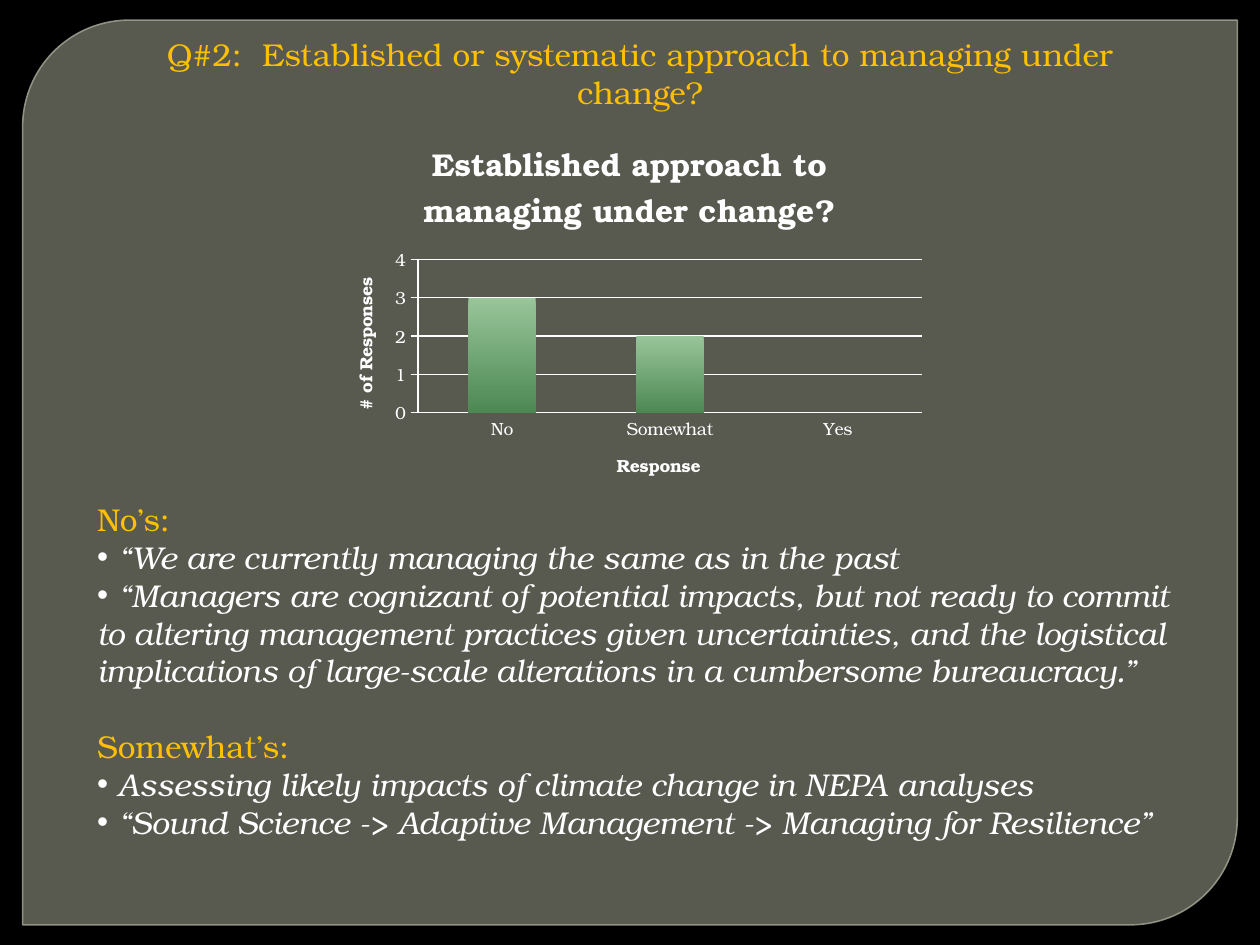
from lxml import etree
from pptx import Presentation
from pptx.chart.data import CategoryChartData
from pptx.dml.color import RGBColor
from pptx.enum.chart import XL_CHART_TYPE, XL_TICK_MARK
from pptx.enum.shapes import MSO_SHAPE
from pptx.enum.text import MSO_ANCHOR, MSO_AUTO_SIZE, PP_ALIGN
from pptx.oxml import parse_xml
from pptx.oxml.ns import nsdecls, qn
from pptx.util import Inches, Pt

COLUMN = XL_CHART_TYPE.COLUMN_CLUSTERED
TICK_NONE, TICK_OUT = XL_TICK_MARK.NONE, XL_TICK_MARK.OUTSIDE
PANEL = MSO_SHAPE.ROUND_2_DIAG_RECTANGLE
MIDDLE, TOP = MSO_ANCHOR.MIDDLE, MSO_ANCHOR.TOP
NO_FIT = MSO_AUTO_SIZE.NONE
CENTER, LEFT = PP_ALIGN.CENTER, PP_ALIGN.LEFT

BLACK = RGBColor(0x00, 0x00, 0x00)
WHITE = RGBColor(0xFF, 0xFF, 0xFF)
GOLD = RGBColor(0xFF, 0xC0, 0x00)
PANEL_FILL = RGBColor(0x88, 0x8B, 0x7B)
PANEL_LINE = RGBColor(0x9D, 0xA0, 0x90)
BAR_TOP = RGBColor(0x98, 0xC5, 0x9A)
BAR_BOTTOM = RGBColor(0x4D, 0x88, 0x53)
FONT = "TeX Gyre Bonum"


def set_font(font, size, color, bold=False, italic=False):
    font.name = FONT
    font.size = Pt(size)
    font.color.rgb = color
    font.bold = bold
    font.italic = italic


def place(shape, left, top, width, height):
    shape.left, shape.top = Inches(left), Inches(top)
    shape.width, shape.height = Inches(width), Inches(height)


prs = Presentation()
prs.slide_width, prs.slide_height = Inches(10), Inches(7.5)
s = prs.slides.add_slide(prs.slide_layouts[1])
s.background.fill.solid()
s.background.fill.fore_color.rgb = BLACK

panel = s.shapes.add_shape(PANEL, Inches(0.18), Inches(0.16), Inches(9.64), Inches(7.18))
panel.adjustments[0] = 0.118
panel.adjustments[1] = 0
panel.shadow.inherit = False
panel.fill.solid()
panel.fill.fore_color.rgb = PANEL_FILL
panel.line.color.rgb = PANEL_LINE
panel.line.width = Pt(0.87)
for color, alpha in zip(panel._element.spPr.iter(qn("a:srgbClr")), (65000, 88000)):
    etree.SubElement(color, qn("a:alpha")).set("val", str(alpha))
s.shapes._spTree.insert(2, panel._element)

title = s.shapes.title
place(title, 0.83, 0.38, 8.5, 0.4)
tf = title.text_frame
tf.text = "Q#2:  Established or systematic approach to managing under change?"
tf.auto_size = NO_FIT
tf.vertical_anchor = MIDDLE
p = tf.paragraphs[0]
p.alignment = CENTER
set_font(p.font, 18, GOLD)

data = CategoryChartData(number_format="0")
data.categories = ["No", "Somewhat", "Yes"]
data.add_series("Series 1", (3, 2, 0))
chart = s.shapes.add_chart(
    COLUMN, Inches(2.58), Inches(0.92), Inches(4.83), Inches(3.08), data
).chart
set_font(chart.font, 10, WHITE)
chart.has_legend = False
cat, val = chart.category_axis, chart.value_axis
for owner, text, size in (
    (chart, "Established approach to managing under change?", 18),
    (cat, "Response", 10),
    (val, "# of Responses", 10),
):
    heading = owner.chart_title if owner is chart else owner.axis_title
    heading.text_frame.text = text
    set_font(heading.text_frame.paragraphs[0].font, size, WHITE, bold=True)
chart.chart_title.include_in_layout = False

val.minimum_scale, val.maximum_scale, val.major_unit = 0, 4, 1
val.has_major_gridlines = True
cat.major_tick_mark, val.major_tick_mark = TICK_NONE, TICK_OUT
for line in (cat.format.line, val.format.line, val.major_gridlines.format.line):
    line.color.rgb = WHITE
    line.width = Pt(0.75)

plot = chart.plots[0]
plot.gap_width = 150
plot.vary_by_categories = False
fill = plot.series[0].format.fill
fill.gradient()
fill.gradient_angle = 270
for stop, color, position in zip(fill.gradient_stops, (BAR_TOP, BAR_BOTTOM), (0, 1)):
    stop.color.rgb = color
    stop.position = position

area = chart._chartSpace.chart.plotArea
for old in area.findall(qn("c:layout")):
    area.remove(old)
area.insert(0, parse_xml(
    f'<c:layout {nsdecls("c")}><c:manualLayout><c:layoutTarget val="inner"/>'
    '<c:xMode val="edge"/><c:yMode val="edge"/><c:x val="0.153"/><c:y val="0.37"/>'
    '<c:w val="0.828"/><c:h val="0.395"/></c:manualLayout></c:layout>'
))

body = s.placeholders[1]
place(body, 0.67, 3.92, 8.92, 3.13)
tf = body.text_frame
tf.auto_size = NO_FIT
tf.vertical_anchor = TOP
answers = [
    ("No’s:", [
        " “We are currently managing the same as in the past",
        " “Managers are cognizant of potential impacts, but not ready to commit "
        "to altering management practices given uncertainties, and the logistical "
        "implications of large-scale alterations in a cumbersome bureaucracy.”",
    ]),
    ("Somewhat’s:", [
        " Assessing likely impacts of climate change in NEPA analyses",
        " “Sound Science -> Adaptive Management -> Managing for Resilience”",
    ]),
]
lines = [(t, i == 0) for head, quotes in answers for i, t in enumerate([head, *quotes])]
for i, (text, is_head) in enumerate(lines):
    p = tf.add_paragraph() if i else tf.paragraphs[0]
    p.text = text
    p.alignment = LEFT
    p.space_before = Pt(21.6 if is_head and i else 0)
    set_font(p.font, 18, GOLD if is_head else WHITE, italic=not is_head)
    pPr = p._p.get_or_add_pPr()
    pPr.set("marL", "0")
    pPr.set("indent", "0")
    if is_head:
        bullet = parse_xml(f'<a:buNone {nsdecls("a")}/>')
    else:
        bullet = parse_xml(f'<a:buChar {nsdecls("a")} char="•"/>')
    pPr.find(qn("a:defRPr")).addprevious(bullet)

prs.save("out.pptx")
